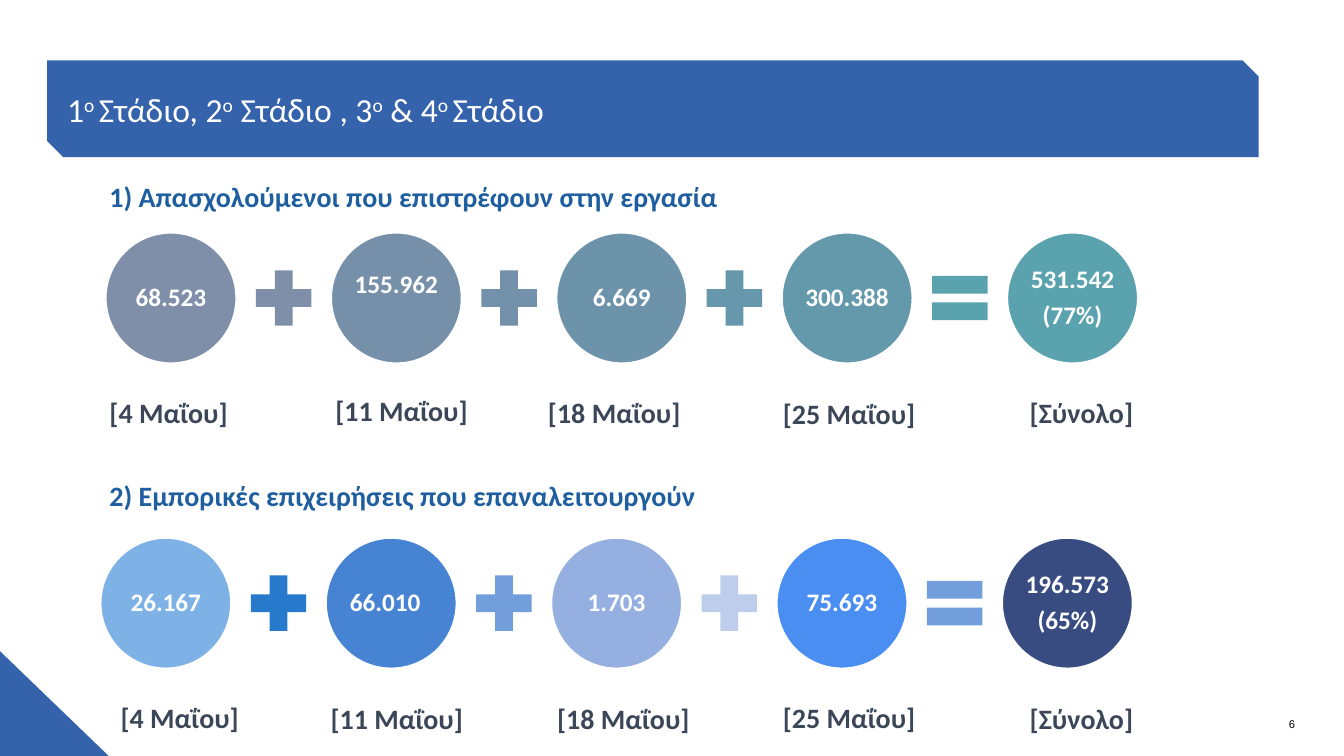
from pptx import Presentation
from pptx.dml.color import RGBColor
from pptx.enum.shapes import MSO_SHAPE as Form
from pptx.enum.text import MSO_ANCHOR as Anchor, MSO_AUTO_SIZE as AutoSize, PP_ALIGN as Align
from pptx.util import Cm, Pt

# Content: superscripts in the title are marked True
TITLE = [("1", False), ("ο ", True), ("Στάδιο, 2", False), ("ο", True),
         (" Στάδιο , 3", False), ("ο", True), (" & 4", False),
         ("ο ", True), ("Στάδιο", False)]
PAGE_NUMBER = "6"
# Dates with the width of their label
DATES = [("[4 Μαΐου]", 3.53), ("[11 Μαΐου]", 3.89), ("[18 Μαΐου]", 3.89),
         ("[25 Μαΐου]", 3.89), ("[Σύνολο]", 3.12)]
SUMS = [
    dict(heading="1) Απασχολούμενοι που επιστρέφουν στην εργασία",
         heading_top=4.39, heading_width=15.95, left=2.67, top=5.87,
         values=["68.523", "155.962", "6.669", "300.388", "531.542\n(77%)"],
         circles=["7F8FA9", "7690AA", "6D93AB", "6499AC", "5AA2AE"],
         signs=["7F8FA9", "7391AA", "6797AC", "5AA2AE"],
         labels=[(2.51, 9.83), (8.2, 9.8), (13.56, 9.83), (19.48, 9.86), (25.7, 9.83)]),
    dict(heading="2) Εμπορικές επιχειρήσεις που επαναλειτουργούν",
         heading_top=11.94, heading_width=15.42, left=2.54, top=13.56,
         values=["26.167", "66.010", "1.703", "75.693", "196.573\n(65%)"],
         circles=["7EB2E6", "4683D3", "95B0E0", "4A8EF2", "384C81"],
         signs=["2779CB", "729EDC", "BECDEB", "729EDC"],
         labels=[(2.79, 17.53), (8.08, 17.55), (13.79, 17.55), (19.48, 17.53), (25.7, 17.55)]),
]
# Margins (left, right, bottom) of the values that sit off centre
MARGIN = 0.08
OFF_CENTRE = {"155.962": (MARGIN, MARGIN, 0.74), "66.010": (0, 0.3, MARGIN)}

WHITE = RGBColor(0xFF, 0xFF, 0xFF)
BLACK = RGBColor(0, 0, 0)
BLUE = RGBColor(0x34, 0x62, 0xAB)
HEADING_BLUE = RGBColor(0x1F, 0x5F, 0xA0)
SLATE = RGBColor(0x3B, 0x47, 0x59)

CIRCLE, SIGN, PITCH = 3.28, 1.9, 5.68
SIGN_LEFT = (PITCH + CIRCLE - SIGN) / 2
SIGN_TOP = (CIRCLE - SIGN) / 2


def style(para, size, color, bold=False, name="Calibri"):
    font = para.font
    font.size, font.bold, font.name = Pt(size), bold, name
    font.color.rgb = color


def add_form(shapes, form, left, top, width, height, color):
    shape = shapes.add_shape(form, Cm(left), Cm(top), Cm(width), Cm(height))
    shape.shadow.inherit = False
    shape.fill.solid()
    shape.fill.fore_color.rgb = color
    shape.line.fill.background()
    return shape


def add_label(text, left, top, width, color):
    box = page.shapes.add_textbox(Cm(left), Cm(top), Cm(width), Cm(1.11))
    frame = box.text_frame
    frame.word_wrap = False
    frame.auto_size = AutoSize.SHAPE_TO_FIT_TEXT
    frame.text = text
    style(frame.paragraphs[0], 20, color, bold=True)


def add_circle(shapes, left, top, color, text):
    circle = add_form(shapes, Form.OVAL, left, top, CIRCLE, CIRCLE, color)
    circle.line.color.rgb = WHITE
    circle.line.width = Pt(1)
    frame = circle.text_frame
    frame.word_wrap = True
    frame.vertical_anchor = Anchor.MIDDLE
    margins = OFF_CENTRE.get(text, (MARGIN, MARGIN, MARGIN))
    frame.margin_left, frame.margin_right, frame.margin_bottom = map(Cm, margins)
    frame.margin_top = Cm(MARGIN)
    frame.text = text
    for para in frame.paragraphs:
        para.alignment = Align.CENTER
        para.line_spacing = 0.9
        para.space_after = Pt(6.3)
        style(para, 18, WHITE, bold=True)


deck = Presentation()
deck.slide_width, deck.slide_height = Cm(33.87), Cm(19.05)
page = deck.slides.add_slide(deck.slide_layouts[6])

# Corner and page number
add_form(page.shapes, Form.RIGHT_TRIANGLE, 0, 16.41, 2.74, 2.64, BLUE)
box = page.shapes.add_textbox(Cm(27.74), Cm(18.03), Cm(4.9), Cm(0.38))
frame = box.text_frame
frame.word_wrap = True
frame.vertical_anchor = Anchor.BOTTOM
frame.margin_left = frame.margin_right = frame.margin_top = frame.margin_bottom = 0
frame.text = PAGE_NUMBER
frame.paragraphs[0].alignment = Align.RIGHT
style(frame.paragraphs[0], 8, BLACK, name="Arial")

# Title bar
bar = add_form(page.shapes, Form.SNIP_2_DIAG_RECTANGLE, 1.19, 1.52, 30.53, 2.44, BLUE)
frame = bar.text_frame
frame.word_wrap = True
frame.vertical_anchor = Anchor.MIDDLE
frame.margin_left = frame.margin_right = Cm(0.3)
frame.margin_top = frame.margin_bottom = Cm(0.05)
para = frame.paragraphs[0]
para.alignment = Align.LEFT
style(para, 24, WHITE)
for text, raised in TITLE:
    span = para.add_run()
    span.text = text
    if raised:
        span._r.get_or_add_rPr().set("baseline", "30000")

# The two sums: circles joined by plus signs, then an equals sign
for row in SUMS:
    add_label(row["heading"], 2.51, row["heading_top"], row["heading_width"], HEADING_BLUE)
    group = page.shapes.add_group_shape()
    for i, (value, color) in enumerate(zip(row["values"], row["circles"])):
        left = row["left"] + i * PITCH
        add_circle(group.shapes, left, row["top"], RGBColor.from_string(color), value)
        if i < len(row["signs"]):
            last = i == len(row["signs"]) - 1
            add_form(group.shapes, Form.MATH_EQUAL if last else Form.MATH_PLUS,
                     left + SIGN_LEFT, row["top"] + SIGN_TOP, SIGN, SIGN,
                     RGBColor.from_string(row["signs"][i]))
    for (date, width), (left, top) in zip(DATES, row["labels"]):
        add_label(date, left, top, width, SLATE)

deck.save("out.pptx")
